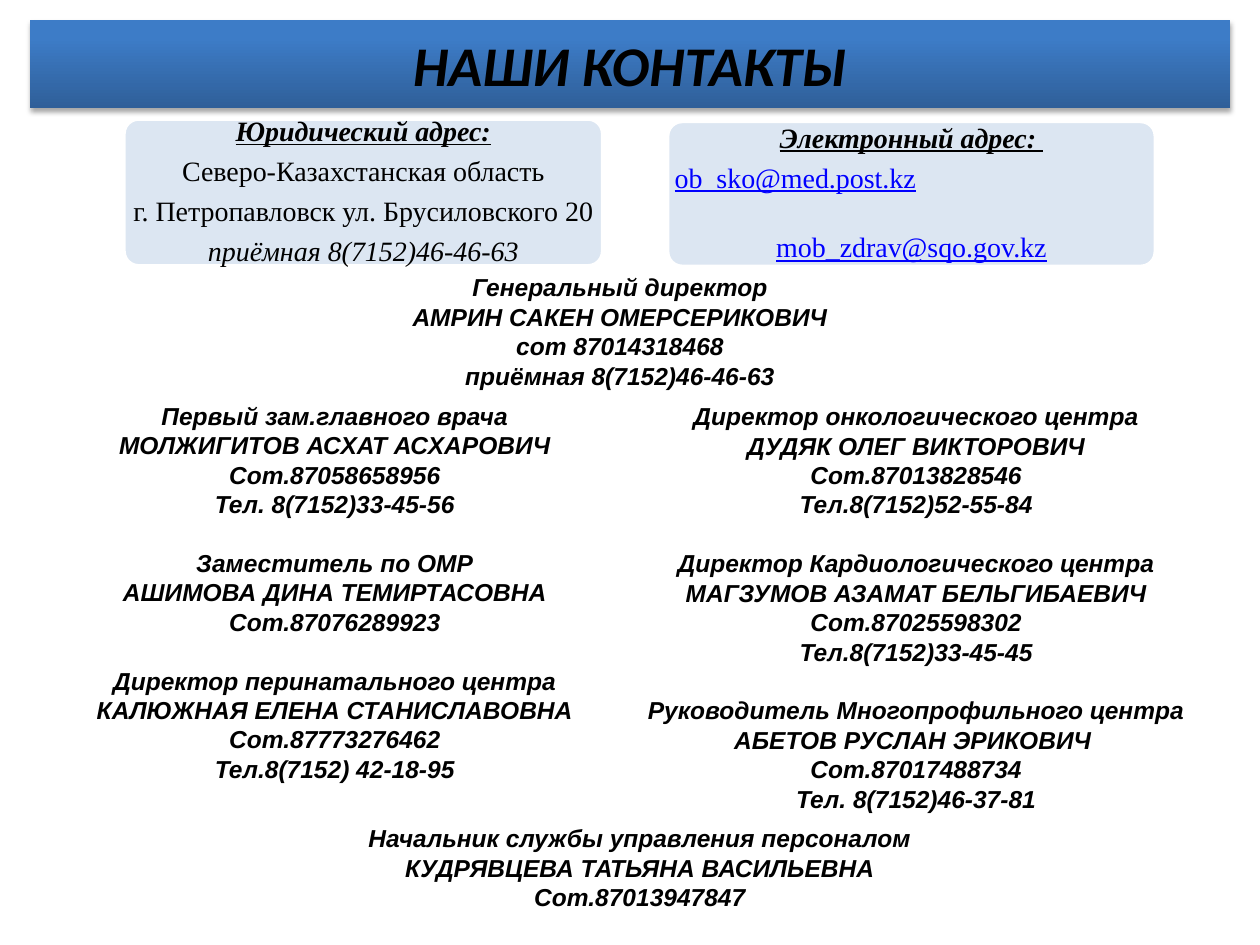
"""Builds the contacts slide of a regional hospital."""
from lxml import etree
from pptx import Presentation
from pptx import util as u
from pptx.dml.color import RGBColor
from pptx.enum import shapes, text
from pptx.oxml.ns import qn

BLACK = RGBColor(0x00, 0x00, 0x00)
WHITE = RGBColor(0xFF, 0xFF, 0xFF)
PALE = RGBColor(0xDC, 0xE6, 0xF2)
LINK = RGBColor(0x00, 0x00, 0xFF)
BLUE = RGBColor(0x3D, 0x7C, 0xC7)
NAVY = RGBColor(0x2F, 0x5F, 0x99)


class ContactSlide:
    """Holds the slide and its style, and draws each kind of element."""

    def __init__(self, prs):
        self.s = prs.slides.add_slide(prs.slide_layouts[6])
        self.pitch = u.Pt(16.8)

    def style(self, p, content, font, size, bold=False, italic=False,
              underline=False, color=BLACK):
        p.text = content
        p.alignment = text.PP_ALIGN.CENTER
        f = p.font
        f.name, f.size = font, u.Pt(size)
        f.bold, f.italic, f.underline = bold, italic, underline
        f.color.rgb = color

    def shape(self, kind, box):
        sp = self.s.shapes.add_shape(kind, *map(u.Cm, box))
        sp.shadow.inherit = False
        return sp

    def frame(self, box):
        tf = self.s.shapes.add_textbox(*map(u.Cm, box)).text_frame
        tf.word_wrap = True
        tf.vertical_anchor = text.MSO_ANCHOR.MIDDLE
        return tf

    def paragraphs(self, tf, count):
        return [tf.paragraphs[0]] + [tf.add_paragraph() for _ in range(count - 1)]

    def banner(self, content, box):
        sp = self.shape(shapes.MSO_SHAPE.RECTANGLE, box)
        sp.line.fill.background()
        sp.fill.gradient()
        sp.fill.gradient_angle = 90
        for stop, color, pos in zip(sp.fill.gradient_stops, (NAVY, BLUE), (0, 0.8)):
            stop.color.rgb, stop.position = color, pos
        effects = sp._element.spPr.find(qn("a:effectLst"))
        shadow = etree.SubElement(effects, qn("a:outerShdw"), blurRad="39400",
                                  dist="23000", dir="5400000", rotWithShape="0")
        color = etree.SubElement(shadow, qn("a:srgbClr"), val="000000")
        etree.SubElement(color, qn("a:alpha"), val="35000")
        tf = sp.text_frame
        tf.vertical_anchor = text.MSO_ANCHOR.MIDDLE
        self.style(tf.paragraphs[0], content, "Calibri", 32, True, True)

    def card(self, box, lines):
        sp = self.shape(shapes.MSO_SHAPE.ROUNDED_RECTANGLE, box)
        sp.adjustments[0] = 0.1
        sp.fill.solid()
        sp.fill.fore_color.rgb = PALE
        sp.line.color.rgb = WHITE
        sp.line.width = u.Pt(2)
        x, y, w, h = box
        tf = self.frame((x + 0.09, y + 0.09, w - 0.18, h - 0.18))
        tf.margin_left = tf.margin_right = u.Cm(0.05)
        tf.margin_top = tf.margin_bottom = u.Cm(0.05)
        ps = self.paragraphs(tf, len(lines))
        for p, (content, look) in zip(ps, lines):
            self.style(p, content, "Times New Roman", 16, **look)
            p.line_spacing = 0.9
            p.space_after = u.Pt(5.6)
        return ps

    def people(self, box, *groups):
        tf = self.frame(box)
        ps = iter(self.paragraphs(tf, sum(map(len, groups))))
        for i, group in enumerate(groups):
            for j, content in enumerate(group):
                p = next(ps)
                self.style(p, content, "Arial", 14, True, True)
                p.line_spacing = self.pitch
                if i and not j:
                    p.space_before = self.pitch


def main():
    prs = Presentation()
    prs.slide_width, prs.slide_height = u.Cm(25.4), u.Cm(19.05)
    s = ContactSlide(prs)
    heading = {"bold": True, "italic": True, "underline": True}
    link = {"underline": True, "color": LINK}

    s.banner("НАШИ КОНТАКТЫ", (0.6, 0.4, 24.2, 1.78))
    s.card((2.5, 2.4, 9.65, 2.96), [
        ("Юридический адрес:", heading),
        ("Северо-Казахстанская область", {}),
        ("г. Петропавловск ул. Брусиловского 20", {}),
        ("приёмная 8(7152)46-46-63", {"italic": True})])
    mail = s.card((13.46, 2.45, 9.83, 2.92), [
        ("Электронный адрес: ", heading),
        ("ob_sko@med.post.kz", link),
        ("mob_zdrav@sqo.gov.kz", link)])[1]
    mail.alignment = text.PP_ALIGN.LEFT
    mail.space_after = u.Pt(22.6)

    s.people((12.12, 7.92, 12.7, 8.64),
             ("Директор онкологического центра", "ДУДЯК ОЛЕГ ВИКТОРОВИЧ",
              "Сот.87013828546", "Тел.8(7152)52-55-84"),
             ("Директор Кардиологического центра", "МАГЗУМОВ АЗАМАТ БЕЛЬГИБАЕВИЧ",
              "Сот.87025598302", "Тел.8(7152)33-45-45"),
             ("Руководитель Многопрофильного центра", "АБЕТОВ РУСЛАН ЭРИКОВИЧ ",
              "Сот.87017488734", "Тел. 8(7152)46-37-81"))
    s.people((0.4, 7.92, 12.7, 8.03),
             ("Первый зам.главного врача", "МОЛЖИГИТОВ АСХАТ АСХАРОВИЧ",
              "Сот.87058658956", "Тел. 8(7152)33-45-56"),
             ("Заместитель по ОМР", "АШИМОВА ДИНА ТЕМИРТАСОВНА", "Сот.87076289923"),
             ("Директор перинатального центра", "КАЛЮЖНАЯ ЕЛЕНА СТАНИСЛАВОВНА",
              "Сот.87773276462", "Тел.8(7152) 42-18-95"))
    s.people((6.15, 5.36, 12.7, 2.64),
             ("Генеральный директор", "АМРИН САКЕН ОМЕРСЕРИКОВИЧ",
              "сот 87014318468", "приёмная 8(7152)46-46-63"))
    s.people((6.55, 16.46, 12.7, 2.06),
             ("Начальник службы управления персоналом",
              "КУДРЯВЦЕВА ТАТЬЯНА ВАСИЛЬЕВНА", "Сот.87013947847"))
    prs.save("out.pptx")


if __name__ == "__main__":
    main()
